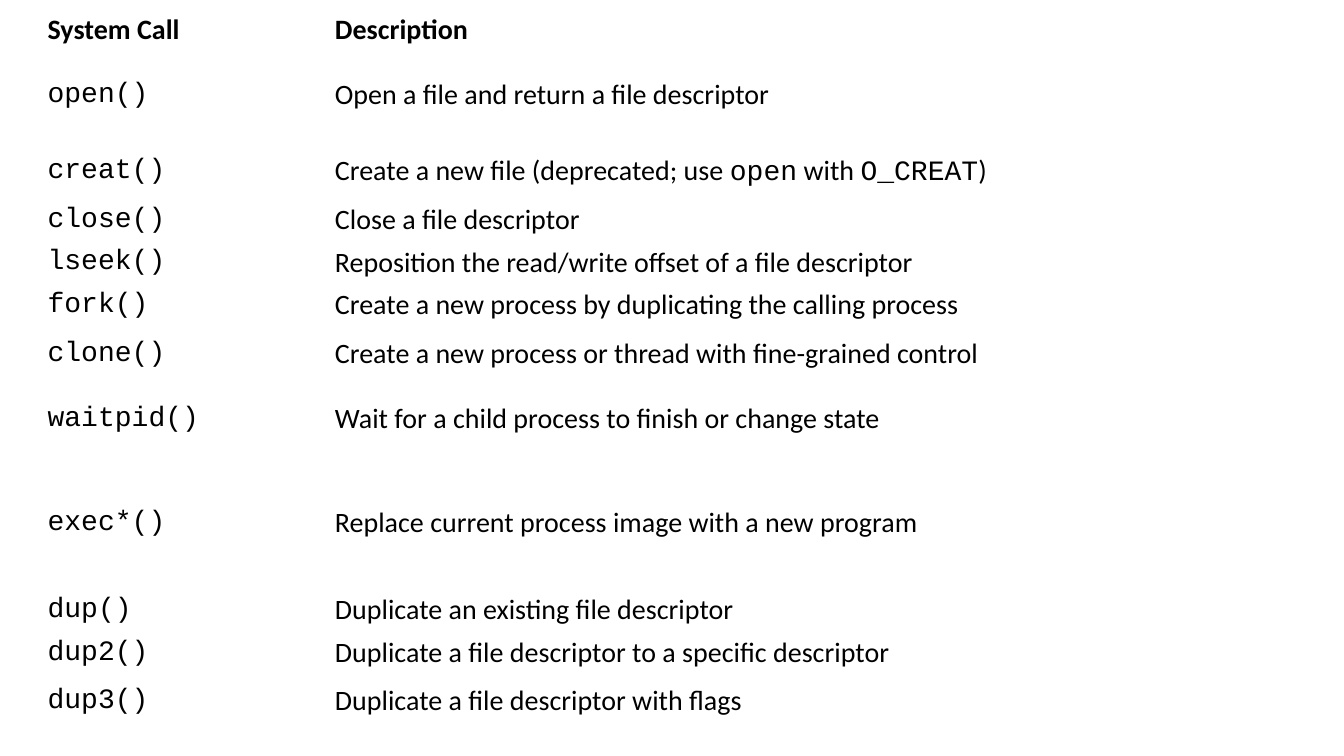
from pptx import Presentation
from pptx.dml.color import RGBColor
from pptx.enum.text import MSO_ANCHOR
from pptx.util import Cm, Pt

PROSE_FONT = "Calibri"
CODE_FONT = "Courier New"

system_calls = [
    (0.64, "System Call", "Description"),
    (2.34, "`open()`", "Open a file and return a file descriptor"),
    (1.5, "`creat()`", "Create a new file (deprecated; use `open` with `O_CREAT`)"),
    (0.94, "`close()`", "Close a file descriptor"),
    (1.22, "`lseek()`", "Reposition the read/write offset of a file descriptor"),
    (0.94, "`fork()`", "Create a new process by duplicating the calling process"),
    (1.5, "`clone()`", "Create a new process or thread with fine-grained control"),
    (1.78, "`waitpid()`", "Wait for a child process to finish or change state"),
    (3.45, "`exec*()`", "Replace current process image with a new program"),
    (0.94, "`dup()`", "Duplicate an existing file descriptor"),
    (1.22, "`dup2()`", "Duplicate a file descriptor to a specific descriptor"),
    (1.22, "`dup3()`", "Duplicate a file descriptor with flags"),
]
column_widths = [7.24, 19.81]


def write_cell(cell, text, bold):
    cell.fill.background()
    cell.vertical_anchor = MSO_ANCHOR.MIDDLE
    cell.margin_left = cell.margin_right = Cm(0.08)
    cell.margin_top = cell.margin_bottom = Cm(0.03)
    para = cell.text_frame.paragraphs[0]
    para.font.size = Pt(20)
    para.font.bold = bold
    para.font.color.rgb = RGBColor.from_string("000000")
    for position, part in enumerate(text.split("`")):
        if part:
            span = para.add_run()
            span.text = part
            span.font.name = CODE_FONT if position % 2 else PROSE_FONT


deck = Presentation()
deck.slide_width = Cm(33.87)
deck.slide_height = Cm(19.05)
page = deck.slides.add_slide(deck.slide_layouts[6])

total_height = sum(height for height, name, description in system_calls)
table = page.shapes.add_table(
    len(system_calls), len(column_widths),
    Cm(1.12), Cm(0.3), Cm(sum(column_widths)), Cm(total_height),
).table
table.first_row = False
table.horz_banding = False

for column, width in zip(table.columns, column_widths):
    column.width = Cm(width)

for index, (height, name, description) in enumerate(system_calls):
    table.rows[index].height = Cm(height)
    write_cell(table.cell(index, 0), name, index == 0)
    write_cell(table.cell(index, 1), description, index == 0)

deck.save("out.pptx")
